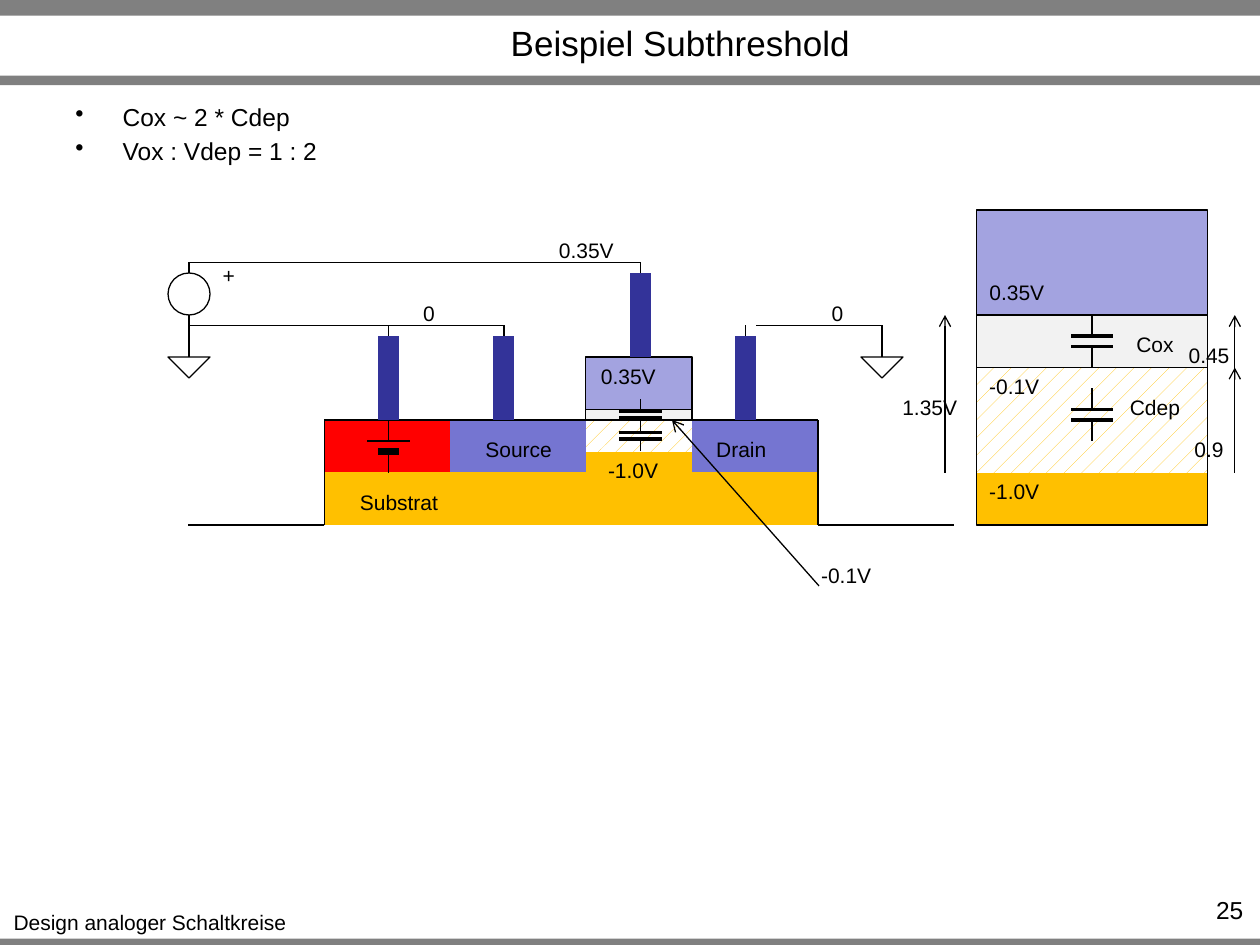
import pptx
import pptx.util
import pptx.dml.color
import pptx.enum.dml
import pptx.enum.shapes
import pptx.enum.text
import pptx.oxml
import pptx.oxml.ns

SHAPES = pptx.enum.shapes.MSO_SHAPE
ALIGN = pptx.enum.text.PP_ALIGN
COLORS = {
    "ink": "000000", "paper": "FFFFFF", "bar": "808080", "substrate": "FFC000",
    "oxide": "F2F2F2", "doped": "7575D1", "bulk": "FF0000", "gate": "A3A3E0",
    "contact": "333399",
}
COLUMNS, ROWS = 120, 90
TOP, BOTTOM = 0, 2


def color(name):
    return pptx.dml.color.RGBColor.from_string(COLORS[name])


class Diagram:
    """Draws on one slide; all lengths are columns and rows of a 120 x 90 grid."""

    def __init__(self, deck):
        self.slide = deck.slides.add_slide(deck.slide_layouts[6])
        self.cell = deck.slide_width / COLUMNS
        self.font = "Arial"
        self.thin, self.plate = 0.75, 2

    def grid(self, *lengths):
        return [round(length * self.cell) for length in lengths]

    def shape(self, box, fill=None, outline=False, kind=SHAPES.FLOWCHART_PROCESS):
        shape = self.slide.shapes.add_shape(kind, *self.grid(*box))
        shape.shadow.inherit = False
        if fill:
            shape.fill.solid()
            shape.fill.fore_color.rgb = color(fill)
        else:
            shape.fill.background()
        if outline:
            shape.line.color.rgb = color("ink")
            shape.line.width = pptx.util.Pt(self.thin)
        else:
            shape.line.fill.background()
        return shape

    def depletion(self, box):
        region = self.shape(box)
        region.fill.patterned()
        region.fill.pattern = pptx.enum.dml.MSO_PATTERN.PERCENT_5
        region.fill.fore_color.rgb = color("substrate")
        region.fill.back_color.rgb = color("paper")

    def line(self, x1, y1, x2, y2, width=None, arrow=False):
        line = self.slide.shapes.add_connector(
            pptx.enum.shapes.MSO_CONNECTOR.STRAIGHT, *self.grid(x1, y1, x2, y2))
        line.line.color.rgb = color("ink")
        line.line.width = pptx.util.Pt(width or self.thin)
        properties = line._element.spPr
        if arrow:
            tail = pptx.oxml.parse_xml(
                f'<a:tailEnd {pptx.oxml.ns.nsdecls("a")} type="arrow"/>')
            line.line._get_or_add_ln().append(tail)
        properties.append(pptx.oxml.parse_xml(
            f'<a:effectLst {pptx.oxml.ns.nsdecls("a")}/>'))
        return line

    def text(self, box, lines, size=12, align=ALIGN.CENTER, wrap=False,
             bullet=False, middle=False):
        frame = self.slide.shapes.add_textbox(*self.grid(*box)).text_frame
        frame.word_wrap = wrap
        if middle:
            frame.vertical_anchor = pptx.enum.text.MSO_ANCHOR.MIDDLE
        frame.text = lines
        for index, paragraph in enumerate(frame.paragraphs):
            paragraph.alignment = align
            if bullet:
                self.bullet(paragraph)
                if index:
                    paragraph.space_before = pptx.util.Pt(size * 0.2)
            for run in paragraph.runs:
                run.font.name = self.font
                run.font.size = pptx.util.Pt(size)
                run.font.color.rgb = color("ink")

    def bullet(self, paragraph):
        properties = paragraph._p.get_or_add_pPr()
        indent = self.grid(4.5)[0]
        properties.set("marL", str(indent))
        properties.set("indent", str(-indent))
        properties.append(pptx.oxml.parse_xml(
            f'<a:buChar {pptx.oxml.ns.nsdecls("a")} char="•"/>'))

    def label(self, left, top, width, words):
        self.text((left, top, width, 3.6), words)

    def capacitor(self, x, top, lead, gap):
        """Two plates with a lead on each side; returns both leads."""
        upper, lower = top + lead, top + lead + gap
        for y in (upper, lower):
            self.line(x - 2, y, x + 2, y, self.plate)
        return (self.line(x, top, x, upper),
                self.line(x, lower, x, lower + lead))

    def battery(self, x, top):
        self.line(x - 2, top + 2, x + 2, top + 2)
        self.line(x - 1, top + 3, x + 1, top + 3, 3.5)
        self.line(x, top + 2, x, top)
        self.line(x, top + 5, x, top + 3)

    def ground(self, x, wire_top, top):
        self.line(x, wire_top, x, top)
        self.shape((x - 2, top, 4, 2), outline=True,
                   kind=SHAPES.ISOSCELES_TRIANGLE).rotation = 180

    def contact(self, x, top, height):
        """Metal contact with a one-row wire up to its supply rail."""
        metal = self.shape((x - 1, top, 2, height), "contact")
        self.line(x, top - 1, x, top).end_connect(metal, TOP)


def draw_frame(d):
    for top, height in ((89.4, 0.6), (0, 1.5), (7.2, 0.9)):
        d.shape((0, top, COLUMNS, height), "bar", kind=SHAPES.RECTANGLE)
    d.text((0, 86, 28.6, 3.6), "Design analoger Schaltkreise")
    d.text((15.6, 1.7, 98.4, 4.6), "Beispiel Subthreshold", 20, wrap=True, middle=True)
    d.text((6, 9.1, 108, 5.9), "Cox ~ 2 * Cdep\nVox : Vdep = 1 : 2", 14,
           ALIGN.LEFT, wrap=True, bullet=True)
    d.text((109.2, 84.7, 10.4, 2.9), "25", 14, ALIGN.RIGHT, wrap=True)


def draw_transistor(d):
    well_left, source, gate, drain, well_right = 30.9, 42.9, 55.8, 65.9, 77.9
    surface, floor = 40, 50
    d.shape((31, 43, 47, 7), "substrate")
    d.depletion((55, surface, 12, 3))
    for left, right, fill in ((drain, well_right, "doped"), (source, gate, "doped"),
                              (well_left, source, "bulk")):
        d.shape((left, surface, right - left, 5), fill)
    for x, outer in ((well_left, 17.9), (well_right, 90.9)):
        d.line(x, surface, x, floor)
        d.line(x, floor, outer, floor)
    d.line(well_left, surface, well_right, surface)
    d.shape((gate, 34, drain - gate, 5), "gate", True, SHAPES.RECTANGLE)
    d.shape((gate, 39, drain - gate, 1), "oxide", True)
    for x in (37, 48, 71):
        d.contact(x, 32, 8)
    d.contact(61, 26, 8)
    d.battery(37, surface)
    for top in (38, 40):
        d.capacitor(61, top, 1.2, 0.6)
    d.line(78, 55.8, 64, surface, arrow=True)


def draw_supply(d):
    d.line(61, 25, 18, 25)
    d.line(48, 31, 18, 31)
    d.line(84, 31, 72, 31)
    d.line(18, 25, 18, 26)
    d.shape((16, 26, 4, 4), outline=True, kind=SHAPES.OVAL)
    d.ground(18, 30, 34)
    d.ground(84, 31, 34)


def draw_stack(d):
    """Enlarged gate stack with its voltage drops."""
    left, width, middle = 93, 22, 104
    d.shape((left, 35, width, 15), "substrate")
    d.depletion((left, 35, width, 10))
    oxide = d.shape((left, 30, width, 5), "oxide", True)
    d.shape((left, 20, width, 10), "gate", True, SHAPES.RECTANGLE)
    d.shape((left, 35, width, 15), outline=True)
    upper, lower = d.capacitor(middle, 30, 2, 1)
    upper.begin_connect(oxide, TOP)
    lower.end_connect(oxide, BOTTOM)
    d.capacitor(middle, 37, 2, 1)
    for x, start, end in ((117.6, 45, 35), (117.6, 36, 30), (90, 45, 30)):
        d.line(x, start, x, end, arrow=True)


def draw_labels(d):
    for left, top, width, words in (
            (45, 41, 8.8, "Source"), (67, 41, 7.2, "Drain"), (56, 34, 7.7, "0.35V"),
            (33, 46, 10, "Substrat"), (52, 22, 7.7, "0.35V"), (39.1, 28, 3.5, "0"),
            (78, 28, 3.5, "0"), (56.7, 43, 7.2, "-1.0V"), (77, 53, 7.2, "-0.1V"),
            (20, 24.4, 3.6, "+"), (107, 31, 6, "Cox"), (106.4, 37, 7.2, "Cdep"),
            (93, 35, 7.2, "-0.1V"), (93, 45, 7.2, "-1.0V"), (93, 26, 7.7, "0.35V"),
            (112.5, 41, 5.3, "0.9"), (112, 32, 6.3, "0.45"), (84.7, 37, 7.7, "1.35V")):
        d.label(left, top, width, words)


def main():
    deck = pptx.Presentation()
    deck.slide_width = pptx.util.Inches(10)
    deck.slide_height = pptx.util.Inches(7.5)
    diagram = Diagram(deck)
    for draw in (draw_frame, draw_transistor, draw_supply, draw_stack, draw_labels):
        draw(diagram)
    deck.save("out.pptx")


if __name__ == "__main__":
    main()
